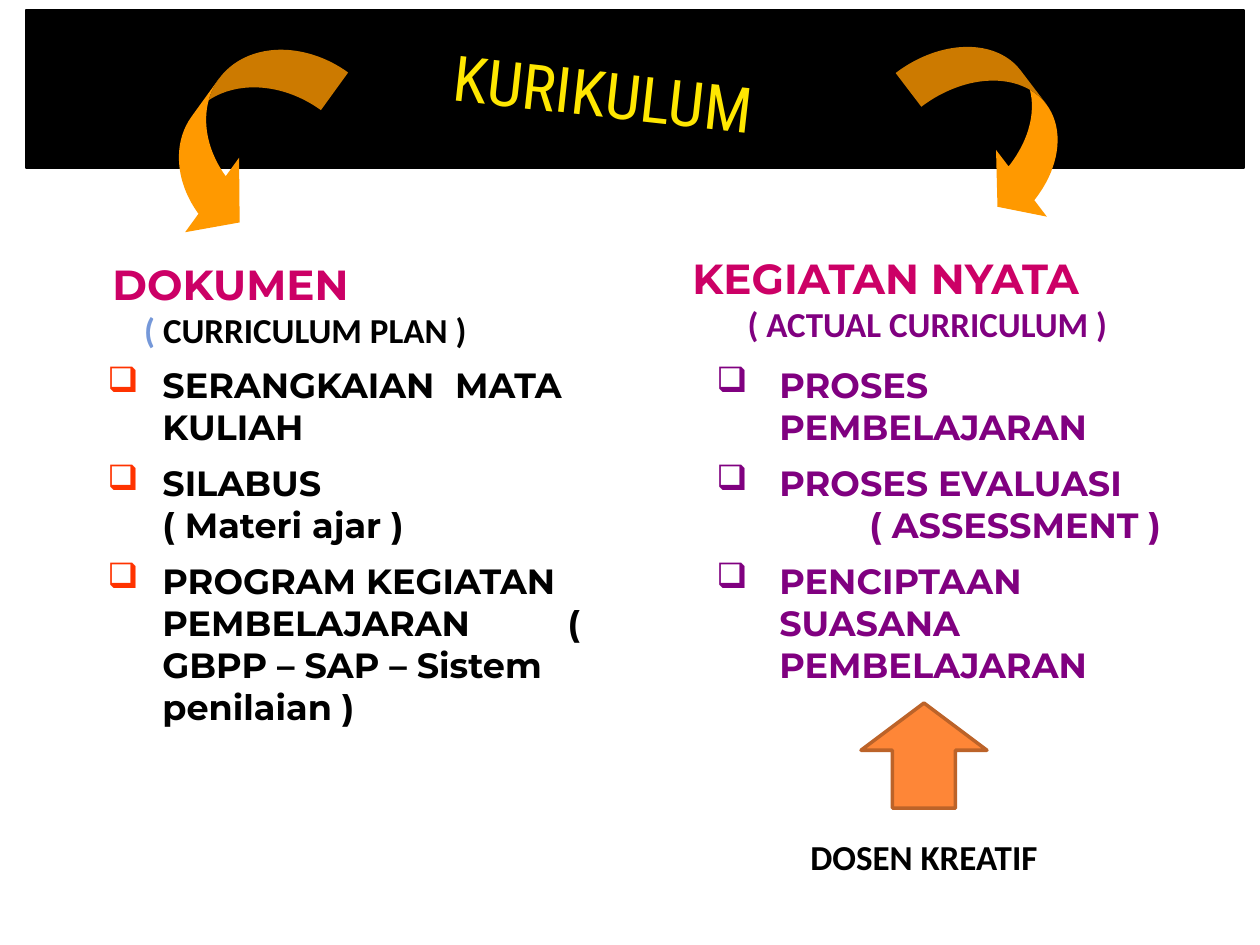
import pptx
import pptx.util
import pptx.dml.color
import pptx.enum.shapes
import pptx.enum.text
import pptx.oxml.ns
import lxml.etree

SCALE = 914400 / 126
SHAPE = pptx.enum.shapes.MSO_SHAPE
ALIGN = pptx.enum.text.PP_ALIGN
AUTO = pptx.enum.text.MSO_AUTO_SIZE

COLORS = {
    "band": "000000", "text": "000000", "title": "FFE701",
    "heading": "CC0066", "bracket": "7598D9", "actual": "800080",
    "box": "FF3300", "curve": "FF9900", "arrow": "FE8637", "edge": "BC6329",
}
FONTS = {
    "title": {"name": "Roboto Condensed", "size": pptx.util.Pt(36), "bold": False},
    "heading": {"name": "Montserrat", "size": pptx.util.Pt(24), "bold": True},
    "item": {"name": "Montserrat", "size": pptx.util.Pt(20), "bold": True},
    "note": {"name": "Calibri", "size": pptx.util.Pt(20), "bold": True},
}


def px(n):
    """Turn pixels into EMU."""
    return pptx.util.Emu(round(n * SCALE))


def rgb(key):
    """Return the named colour."""
    return pptx.dml.color.RGBColor.from_string(COLORS[key])


def set_all(obj, values):
    """Set each attribute of obj from a dict."""
    for name, value in values.items():
        setattr(obj, name, value)


def add_run(p, text, font, color, spacing=0):
    """Add a formatted run, with extra letter spacing in points."""
    r = p.add_run()
    r.text = text
    set_all(r.font, FONTS[font])
    r.font.color.rgb = rgb(color)
    if spacing:
        r.font._element.set("spc", str(spacing * 100))


def set_indent(p, left, hanging=0):
    """Set the left margin and hanging indent of a paragraph."""
    pPr = p._p.get_or_add_pPr()
    pPr.set("marL", str(px(left)))
    pPr.set("indent", str(-px(hanging)))
    return pPr


def add_bullet(pPr, color):
    """Give a paragraph a coloured box bullet."""
    qn = pptx.oxml.ns.qn
    clr = lxml.etree.SubElement(pPr, qn("a:buClr"))
    lxml.etree.SubElement(clr, qn("a:srgbClr"), val=COLORS[color])
    lxml.etree.SubElement(pPr, qn("a:buChar"), char="❑")


def add_text(shapes, box):
    """Add a wrapping text box and return its frame."""
    tf = shapes.add_textbox(*map(px, box)).text_frame
    set_all(tf, {"word_wrap": True, "auto_size": AUTO.SHAPE_TO_FIT_TEXT})
    return tf


def add_figure(shapes, kind, box, fill, line=None, width=0.75, rotation=0, adjust=()):
    """Add a filled preset shape."""
    sp = shapes.add_shape(kind, *map(px, box))
    sp.shadow.inherit = False
    sp.rotation = rotation
    sp.fill.solid()
    sp.fill.fore_color.rgb = rgb(fill)
    if line:
        sp.line.color.rgb = rgb(line)
        sp.line.width = pptx.util.Pt(width)
    else:
        sp.line.fill.background()
    for i, value in enumerate(adjust):
        sp.adjustments[i] = value
    return sp


def add_title(s, text, box):
    """Place and format the tilted title."""
    sp = s.shapes.title
    left, top, width, height = map(px, box)
    set_all(sp, {"left": left, "top": top, "width": width, "height": height, "rotation": 6.3})
    tf = sp.text_frame
    set_all(tf, {"word_wrap": False, "auto_size": AUTO.NONE,
                 "vertical_anchor": pptx.enum.text.MSO_ANCHOR.TOP})
    p = tf.paragraphs[0]
    p.alignment = ALIGN.CENTER
    add_run(p, text, "title", "title")
    return sp


def add_branch(s, box, heading, margin, note_runs, arrow):
    """Add a grouped heading with its note and curved arrow."""
    shapes = s.shapes.add_group_shape().shapes
    tf = add_text(shapes, box)
    p = tf.paragraphs[0]
    p.alignment = ALIGN.LEFT
    set_indent(p, margin)
    add_run(p, heading, "heading", "heading")
    p = tf.add_paragraph()
    p.alignment = ALIGN.CENTER
    for text, color in note_runs:
        add_run(p, text, "note", color)
    add_figure(shapes, fill="curve", **arrow)


def add_list(s, box, items, hanging, color, bullet):
    """Add a bulleted list; an item with an indent has no bullet."""
    tf = add_text(s.shapes, box)
    for i, (runs, indent) in enumerate(items):
        p = tf.add_paragraph() if i else tf.paragraphs[0]
        if indent:
            set_indent(p, indent)
        else:
            p.space_before = pptx.util.Pt(8)
            add_bullet(set_indent(p, 63, hanging), bullet)
        for text, spacing in runs:
            add_run(p, text, "item", color, spacing)


def main():
    """Build the curriculum slide."""
    prs = pptx.Presentation()
    set_all(prs, {"slide_width": px(1260), "slide_height": px(945)})
    s = prs.slides.add_slide(prs.slide_layouts[5])
    title = add_title(s, "KURIKULUM", (357, 48, 494, 72))
    band = add_figure(s.shapes, SHAPE.RECTANGLE, (26, 10, 1218, 158), "band", "band")
    title.element.addprevious(band.element)

    add_list(s, (87, 357, 512, 382), [
        ([("SERANGKAIAN", 0), (" ", 6), ("MATA KULIAH", 0)], 0),
        ([("SILABUS", 0)], 0),
        ([("( Materi ajar )", 0)], 63),
        ([("PROGRAM KEGIATAN PEMBELAJARAN", 0), (" ", 50),
          ("( GBPP – SAP – Sistem penilaian )", 0)], 0),
    ], 55, "text", "box")
    add_list(s, (704, 357, 514, 340), [
        ([("PROSES PEMBELAJARAN", 0)], 0),
        ([("PROSES EVALUASI", 0)], 0),
        ([("( ASSESSMENT )", 0)], 153),
        ([("PENCIPTAAN SUASANA PEMBELAJARAN", 0)], 0),
    ], 63, "actual", "actual")

    add_branch(s, (87, 252, 437, 105), "DOKUMEN", 13,
               [("( ", "bracket"), ("CURRICULUM PLAN )", "text")],
               {"kind": SHAPE.CURVED_RIGHT_ARROW, "box": (189, 21, 101, 231),
                "rotation": 35.9, "adjust": (0.46, 0.91, 0.38)})
    add_branch(s, (661, 246, 533, 105), "KEGIATAN NYATA", 19,
               [("( ACTUAL CURRICULUM )", "actual")],
               {"kind": SHAPE.CURVED_LEFT_ARROW, "box": (949, 21, 101, 210),
                "rotation": 322.7, "adjust": (0.42, 0.83, 0.33)})

    add_figure(s.shapes, SHAPE.UP_ARROW, (861, 703, 126, 105), "arrow", "edge", 2,
               adjust=(0.5, 0.45))
    p = add_text(s.shapes, (777, 829, 294, 55)).paragraphs[0]
    p.alignment = ALIGN.CENTER
    add_run(p, "DOSEN KREATIF", "note", "text")
    prs.save("out.pptx")


if __name__ == "__main__":
    main()
